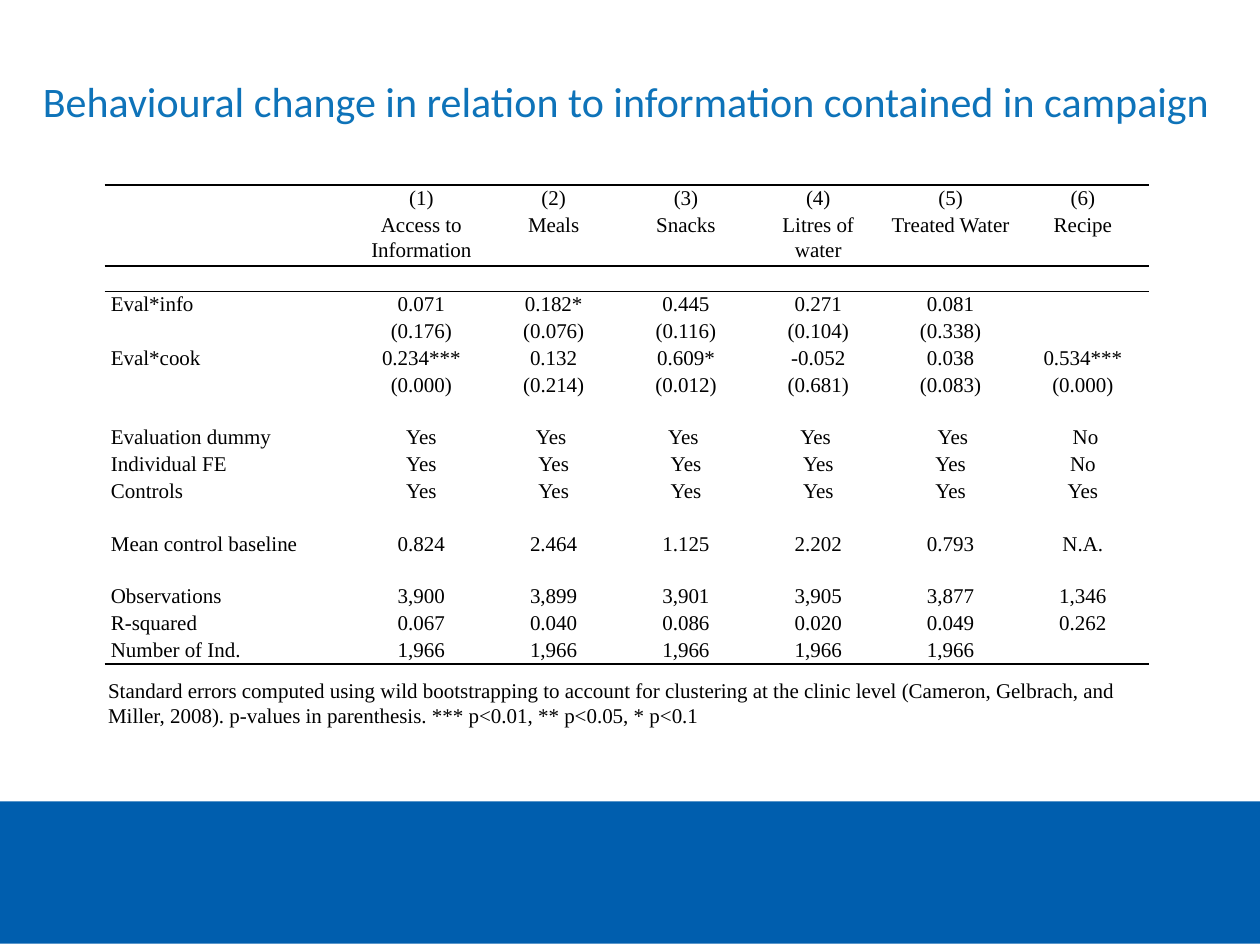
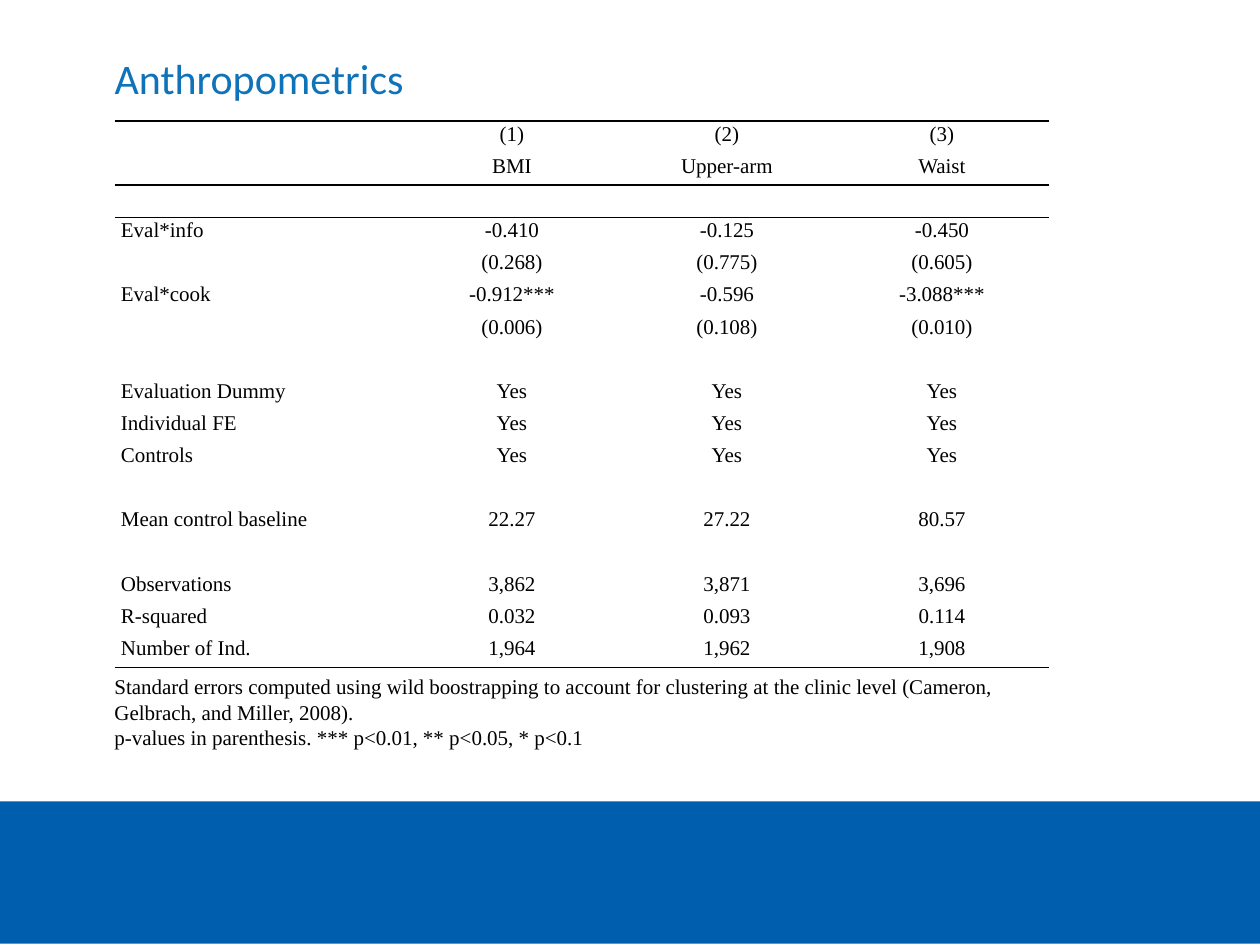
import itertools

import lxml.etree
import pptx
import pptx.dml.color
import pptx.enum.shapes
import pptx.enum.text
import pptx.oxml.ns
import pptx.util

COLORS = {"band": "005EAE", "title": "0E73B9", "ink": "000000"}
SLIDE_SIZE = (pptx.util.Inches(10), pptx.util.Inches(7.5))
GRID = (100, 75)
BAND_BOX = (0, 63.6, 100, 11.3)
NO_STYLE_NO_GRID = "{2D5ABB26-0587-4C30-8999-92F81FD0307C}"
LEFT = pptx.enum.text.PP_ALIGN.LEFT
CENTER = pptx.enum.text.PP_ALIGN.CENTER

TITLE_FONT = {"name": "Calibri", "size": pptx.util.Pt(24)}
BODY_FONT = {"name": "Times New Roman", "size": pptx.util.Pt(12)}
TITLE_FRAME = {
    "margin_left": 0, "margin_top": 0, "margin_right": 0, "margin_bottom": 0,
    "word_wrap": True, "vertical_anchor": pptx.enum.text.MSO_ANCHOR.BOTTOM,
}
NOTE_FRAME = {"word_wrap": True, "vertical_anchor": pptx.enum.text.MSO_ANCHOR.TOP}
CELL_FORMAT = {
    "margin_left": pptx.util.Inches(0.05), "margin_right": pptx.util.Inches(0.05),
    "margin_top": 0, "margin_bottom": 0,
}

BEHAVIOUR = {
    "title": "Behavioural change in relation to information contained in campaign",
    "title_box": (3.4, 3.9, 93, 6.1),
    "table_box": (8.3, 14.7, 82.9, 35.6),
    "label_share": 0.24,
    "line_counts": [1, 2] + [1] * 15,
    "rows": [
        ["", "(1)", "(2)", "(3)", "(4)", "(5)", "(6)"],
        ["", "Access to Information", "Meals", "Snacks", "Litres of water", "Treated Water", "Recipe"],
        [],
        ["Eval*info", "0.071", "0.182*", "0.445", "0.271", "0.081"],
        ["", "(0.176)", "(0.076)", "(0.116)", "(0.104)", "(0.338)"],
        ["Eval*cook", "0.234***", "0.132", "0.609*", "-0.052", "0.038", "0.534***"],
        ["", "(0.000)", "(0.214)", "(0.012)", "(0.681)", "(0.083)", "(0.000)"],
        [],
        ["Evaluation dummy", "Yes", "Yes ", "Yes ", "Yes ", " Yes", " No"],
        ["Individual FE"] + ["Yes"] * 5 + ["No"],
        ["Controls"] + ["Yes"] * 6,
        [],
        ["Mean control baseline", "0.824", "2.464", "1.125", "2.202", "0.793", "N.A."],
        [],
        ["Observations", "3,900", "3,899", "3,901", "3,905", "3,877", "1,346"],
        ["R-squared", "0.067", "0.040", "0.086", "0.020", "0.049", "0.262"],
        ["Number of Ind."] + ["1,966"] * 5,
    ],
    "note_box": (7.6, 53.3, 85.4, 5),
    "notes": [
        "Standard errors computed using wild bootstrapping to account for clustering at the clinic level "
        "(Cameron, Gelbrach, and Miller, 2008). p-values in parenthesis. *** p<0.01, ** p<0.05, * p<0.1",
    ],
}

ANTHROPOMETRICS = {
    "title": "Anthropometrics",
    "title_box": (9.1, 2.1, 82, 6.1),
    "table_box": (9.1, 9.6, 74.2, 43.4),
    "label_share": 0.31,
    "line_counts": [1] * 17,
    "rows": [
        ["", "(1)", "(2)", "(3)"],
        ["", "BMI", "Upper-arm", "Waist"],
        [],
        ["Eval*info", "-0.410", "-0.125", "-0.450"],
        ["", "(0.268)", "(0.775)", "(0.605)"],
        ["Eval*cook", "-0.912***", "-0.596", "-3.088***"],
        ["", "(0.006)", "(0.108)", "(0.010)"],
        [],
        ["Evaluation Dummy"] + ["Yes"] * 3,
        ["Individual FE"] + ["Yes"] * 3,
        ["Controls"] + ["Yes"] * 3,
        [],
        ["Mean control baseline", "22.27", "27.22", "80.57"],
        [],
        ["Observations", "3,862", "3,871", "3,696"],
        ["R-squared", "0.032", "0.093", "0.114"],
        ["Number of Ind.", "1,964", "1,962", "1,908"],
    ],
    "note_box": (8.1, 53, 75.2, 7.1),
    "notes": [
        "Standard errors computed using wild boostrapping to account for clustering at the clinic level "
        "(Cameron, Gelbrach, and Miller, 2008).",
        "p-values in parenthesis. *** p<0.01, ** p<0.05, * p<0.1",
    ],
}


def place(box):
    """Turn a box in grid columns and rows into slide lengths."""
    return [round(cells * size / count)
            for cells, size, count in zip(box, SLIDE_SIZE * 2, GRID * 2)]


def apply_format(target, values):
    """Set each format value as an attribute of the target."""
    for attribute, value in values.items():
        setattr(target, attribute, value)


def rgb(role):
    """Return the colour for a role."""
    return pptx.dml.color.RGBColor.from_string(COLORS[role])


def write(paragraph, words, font, role):
    """Add words to a paragraph in the given font and colour."""
    run = paragraph.add_run()
    run.text = words
    apply_format(run.font, font)
    run.font.color.rgb = rgb(role)


def add_band(slide, box):
    """Draw the footer band."""
    band = slide.shapes.add_shape(pptx.enum.shapes.MSO_SHAPE.RECTANGLE, *place(box))
    band.shadow.inherit = False
    band.fill.solid()
    band.fill.fore_color.rgb = rgb("band")
    band.line.fill.background()


def add_text(slide, box, lines, frame_format, font, role):
    """Place lines of text as the paragraphs of one box."""
    frame = slide.shapes.add_textbox(*place(box)).text_frame
    apply_format(frame, frame_format)
    for index, line in enumerate(lines):
        paragraph = frame.add_paragraph() if index else frame.paragraphs[0]
        write(paragraph, line, font, role)


def add_rule(cell, side):
    """Draw a one-point rule on the top (T) or bottom (B) of a cell."""
    qn = pptx.oxml.ns.qn
    rule = lxml.etree.SubElement(cell._tc.get_or_add_tcPr(), qn(f"a:ln{side}"), w="12700")
    fill = lxml.etree.SubElement(rule, qn("a:solidFill"))
    lxml.etree.SubElement(fill, qn("a:srgbClr"), val=COLORS["ink"])


def fill_cell(cell, words, alignment, sides):
    """Write one table cell and draw its rules."""
    for side in sides:
        add_rule(cell, side)
    cell.fill.background()
    apply_format(cell, CELL_FORMAT)
    paragraph = cell.text_frame.paragraphs[0]
    apply_format(paragraph, {"alignment": alignment, "line_spacing": 1.07})
    if words:
        write(paragraph, words, BODY_FONT, "ink")
    else:
        size = str(int(BODY_FONT["size"].pt * 100))
        lxml.etree.SubElement(paragraph._p, pptx.oxml.ns.qn("a:endParaRPr"), sz=size)


def add_regression(slide, box, rows, label_share, line_counts):
    """Place a regression table with rules around its header and at its foot."""
    left, top, width, height = place(box)
    column_count = len(rows[0])
    table = slide.shapes.add_table(len(rows), column_count, left, top, width, height).table
    apply_format(table, {"first_row": False, "horz_banding": False})
    table._tbl.tblPr.find(pptx.oxml.ns.qn("a:tableStyleId")).text = NO_STYLE_NO_GRID
    value_share = (1 - label_share) / (column_count - 1)
    for index, column in enumerate(table.columns):
        column.width = round(width * (value_share if index else label_share))
    for row, lines in zip(table.rows, line_counts):
        row.height = round(height * lines / sum(line_counts))
    rules = {0: "T", 1: "B", 2: "T", len(rows) - 1: "B"}
    for row_index, entries in enumerate(rows):
        cells = itertools.zip_longest(table.rows[row_index].cells, entries, fillvalue="")
        for column_index, (cell, words) in enumerate(cells):
            fill_cell(cell, words, CENTER if column_index else LEFT, rules.get(row_index, ""))


def add_results_slide(deck, content):
    """Build a slide with a title, a regression table and its notes."""
    slide = deck.slides.add_slide(deck.slide_layouts[6])
    add_band(slide, BAND_BOX)
    add_text(slide, content["title_box"], [content["title"]], TITLE_FRAME, TITLE_FONT, "title")
    add_regression(slide, content["table_box"], content["rows"],
                   content["label_share"], content["line_counts"])
    add_text(slide, content["note_box"], content["notes"], NOTE_FRAME, BODY_FONT, "ink")


def main():
    """Build and save the deck."""
    deck = pptx.Presentation()
    deck.slide_width, deck.slide_height = SLIDE_SIZE
    for content in (BEHAVIOUR, ANTHROPOMETRICS):
        add_results_slide(deck, content)
    deck.save("out.pptx")


if __name__ == "__main__":
    main()
